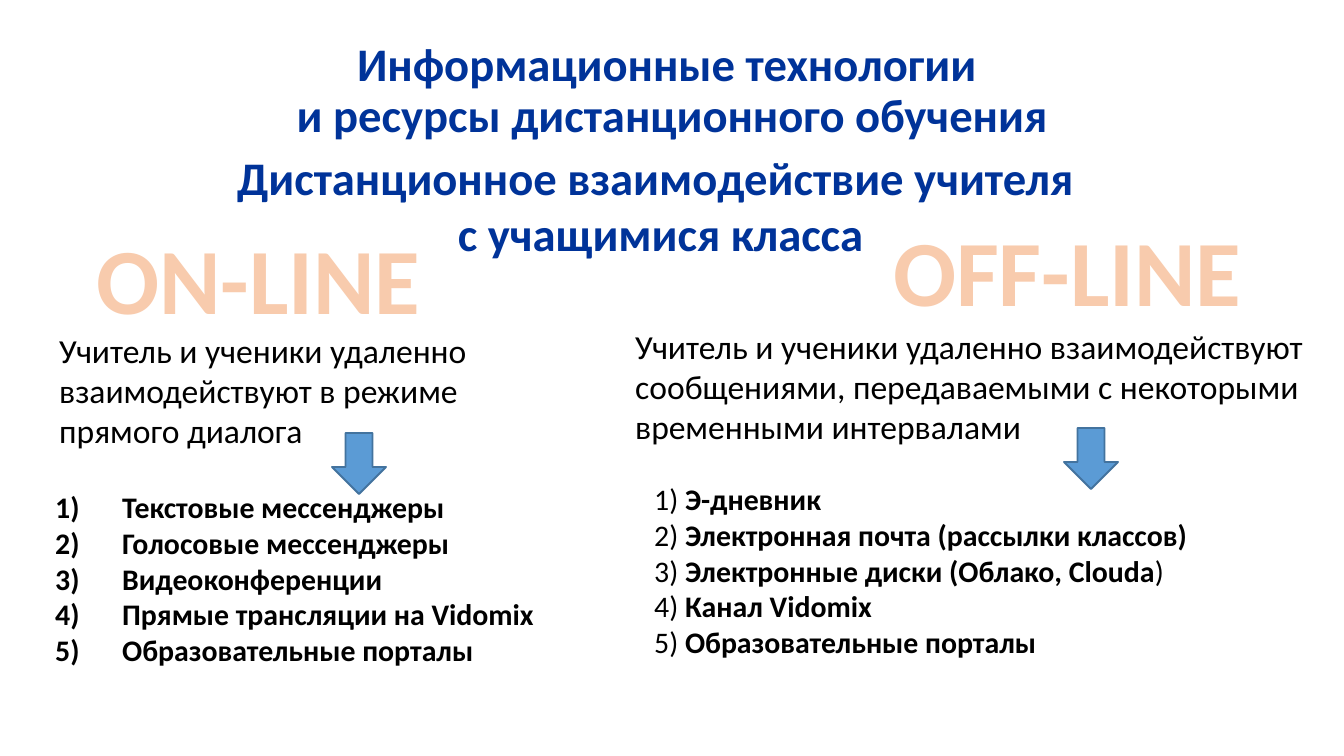
"""Build a slide comparing on-line and off-line teaching."""
from dataclasses import dataclass

from lxml.etree import SubElement
from pptx import Presentation
from pptx.dml.color import RGBColor
from pptx.enum.shapes import MSO_SHAPE
from pptx.enum.text import MSO_ANCHOR, MSO_AUTO_SIZE, PP_ALIGN
from pptx.oxml.ns import qn
from pptx.util import Pt


@dataclass(frozen=True)
class Theme:
    font: str = "Calibri"
    heading: str = "003399"
    mode: str = "F8CBAD"
    text: str = "000000"
    arrow: str = "5B9BD5"
    arrow_line: str = "43739E"
    heading_size: int = 25
    mode_size: int = 50
    body_size: int = 18
    list_size: int = 16


THEME = Theme()
EMU_PER_PX = 914400 / 134.4


def px(*lengths):
    return [round(length * EMU_PER_PX) for length in lengths]


def write(text, *, at, size, color=THEME.text, bold=False, align=PP_ALIGN.LEFT,
          wrap=True, spacing=1.0, numbered=False, box=None):
    """Write paragraphs, each a list of spans whose weight alternates from bold."""
    box = box or page.shapes.add_textbox(0, 0, 0, 0)
    box.left, box.top, box.width, box.height = px(*at)
    frame = box.text_frame
    frame.word_wrap = wrap
    frame.auto_size = MSO_AUTO_SIZE.NONE
    for index, spans in enumerate(text):
        para = frame.add_paragraph() if index else frame.paragraphs[0]
        para.alignment = align
        para.line_spacing = spacing
        if numbered:
            properties = para._p.get_or_add_pPr()
            indent = px(67)[0]
            properties.set("marL", str(indent))
            properties.set("indent", str(-indent))
            SubElement(properties, qn("a:buFont"), typeface="+mj-lt")
            SubElement(properties, qn("a:buAutoNum"), type="arabicParenR")
        for position, words in enumerate(spans):
            span = para.add_run()
            span.text = words
            span.font.name = THEME.font
            span.font.size = Pt(size)
            span.font.bold = bold if position % 2 == 0 else not bold
            span.font.color.rgb = RGBColor.from_string(color)
    return box


deck = Presentation()
deck.slide_width, deck.slide_height = px(1344, 756)
page = deck.slides.add_slide(deck.slide_layouts[5])

heading = dict(size=THEME.heading_size, color=THEME.heading, bold=True, align=PP_ALIGN.CENTER)
title = write([["Информационные технологии "], ["и ресурсы дистанционного обучения"]],
              at=(0, 87, 1344, 62), spacing=0.9, box=page.shapes.title, **heading)
title.text_frame.vertical_anchor = MSO_ANCHOR.BOTTOM
write([["Дистанционное взаимодействие учителя "], ["с учащимися класса"]],
      at=(34, 142, 1253, 126), **heading)

modes = [
    ("ON-LINE", (81, 215, 355, 126),
     "Учитель и ученики удаленно взаимодействуют в режиме прямого диалога",
     (46, 323, 487, 136), (332, 433)),
    ("OFF-LINE", (878, 207, 379, 126),
     "Учитель и ученики удаленно взаимодействуют сообщениями, "
     "передаваемыми с некоторыми временными интервалами",
     (622, 319, 696, 136), (1064, 428)),
]
for name, name_at, description, description_at, arrow_at in modes:
    write([[name]], at=name_at, size=THEME.mode_size, color=THEME.mode, bold=True,
          align=PP_ALIGN.CENTER, wrap=False)
    write([[description]], at=description_at, size=THEME.body_size)
    arrow = page.shapes.add_shape(MSO_SHAPE.DOWN_ARROW, *px(*arrow_at, 54, 61))
    arrow.shadow.inherit = False
    arrow.fill.solid()
    arrow.fill.fore_color.rgb = RGBColor.from_string(THEME.arrow)
    arrow.line.color.rgb = RGBColor.from_string(THEME.arrow_line)
    arrow.line.width = Pt(1)

online_tools = ["Текстовые мессенджеры", "Голосовые мессенджеры", "Видеоконференции",
                "Прямые трансляции на Vidomix", "Образовательные порталы"]
write([[tool] for tool in online_tools], at=(42, 482, 582, 195),
      size=THEME.list_size, bold=True, numbered=True)

offline_tools = [["Э-дневник"], ["Электронная почта (рассылки классов)"],
                 ["Электронные диски (Облако, Clouda", ")"],
                 ["Канал Vidomix"], ["Образовательные порталы"]]
write([[f"{number}) ", *spans] for number, spans in enumerate(offline_tools, 1)],
      at=(641, 474, 671, 195), size=THEME.list_size)

deck.save("out.pptx")
